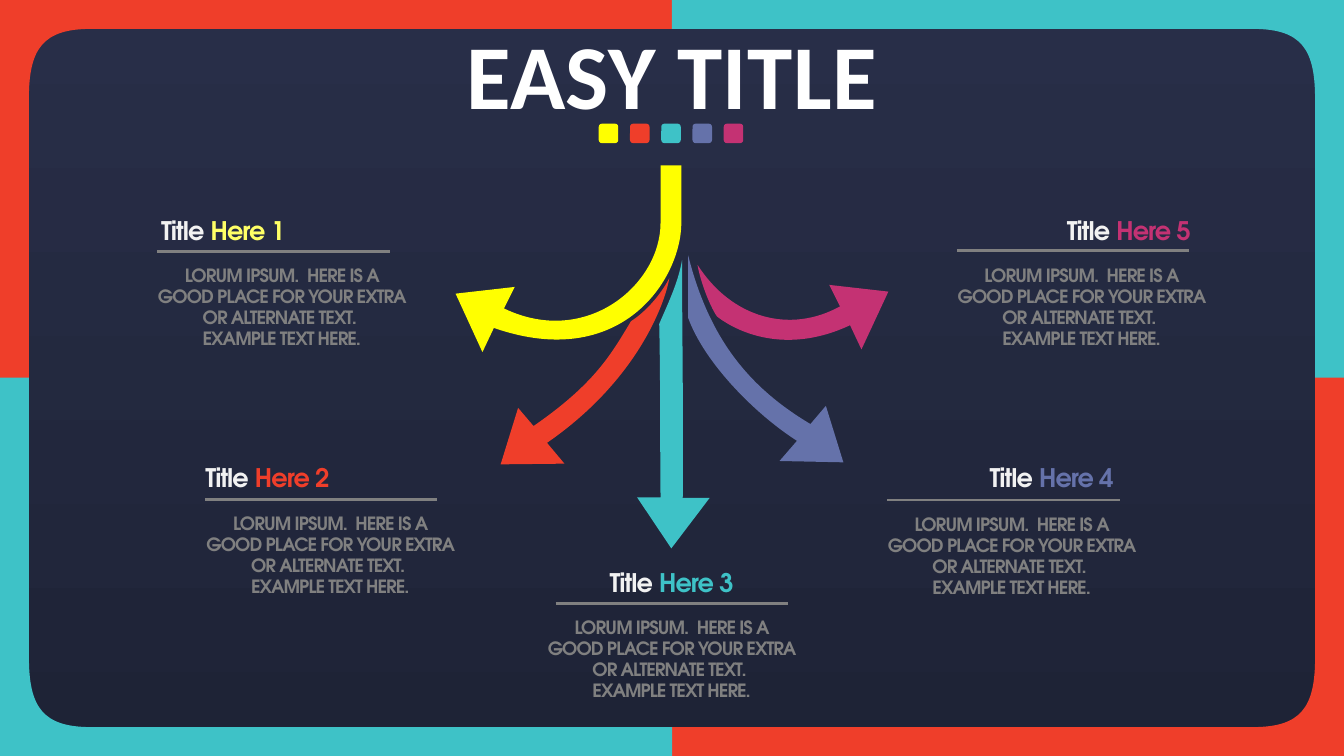
from lxml.etree import SubElement
from pptx import Presentation
from pptx.dml.color import RGBColor
from pptx.enum.shapes import MSO_CONNECTOR, MSO_SHAPE
from pptx.enum.text import MSO_ANCHOR, MSO_AUTO_SIZE, PP_ALIGN
from pptx.oxml.ns import qn
from pptx.util import Inches, Pt

COLUMNS, ROWS = 20, 11.25
CELL = Inches(1)
FONT = "TeX Gyre Adventor"
COLOURS = {
    "yellow": "FFFF00", "pale_yellow": "FFFF66", "red": "EF3E2A",
    "teal": "3EC2C7", "indigo": "6572AA", "magenta": "C43273",
    "white": "FFFFFF", "off_white": "F2F2F2", "grey": "808080",
    "navy_top": "282E48", "navy_bottom": "1E2336",
}
BODY = ["LORUM IPSUM.  HERE IS A GOOD PLACE FOR YOUR EXTRA OR ALTERNATE TEXT. ",
        "EXAMPLE TEXT HERE."]
SQUARES = ["yellow", "red", "teal", "indigo", "magenta"]
ARROWS = {
    "yellow": [(9.83, 2.46), (10.14, 2.46), (10.14, 3.31),
               (10.14, 4.16, 9.24, 5.54, 7.35, 4.88), (7.18, 5.24),
               (6.78, 4.37), (7.66, 4.27), (7.5, 4.59),
               (8.73, 5.18, 9.83, 4.23, 9.83, 3.32)],
    "red": [(9.96, 4.14), (9.91, 4.45, 9.53, 5.63, 8.14, 6.59), (8.4, 6.9),
            (7.45, 6.91), (7.71, 6.07), (7.94, 6.34),
            (8.85, 5.71, 9.09, 5.28, 9.39, 4.78),
            (9.61, 4.64, 9.83, 4.39, 9.96, 4.14)],
    "magenta": [(10.67, 4.71), (10.94, 4.92, 11.67, 5.3, 12.65, 4.84),
                (12.82, 5.2), (13.22, 4.34), (12.34, 4.24), (12.5, 4.56),
                (11.76, 4.97, 10.89, 4.74, 10.38, 3.94),
                (10.42, 4.18, 10.56, 4.55, 10.67, 4.71)],
    "indigo": [(10.24, 3.8), (10.24, 4.73),
               (10.48, 5.39, 11.22, 6.15, 11.86, 6.56), (11.6, 6.86),
               (12.55, 6.88), (12.29, 6.04), (12.06, 6.31),
               (11.17, 5.78, 10.56, 5.07, 10.24, 3.8)],
    "teal": [(10.15, 3.87), (10.15, 4.95, 10.17, 5.83, 10.16, 7.41),
             (10.56, 7.41), (9.99, 8.16), (9.48, 7.4), (9.83, 7.4),
             (9.82, 6.4, 9.83, 5.73, 9.81, 4.82),
             (9.92, 4.56, 10.09, 4.22, 10.15, 3.87)],
}
CORNER = [(0, 5.63), (0, 0), (10, 0), (10, 0.43), (1.36, 0.43),
          (0.64, 0.43, 0.43, 0.72, 0.43, 1.47), (0.43, 5.63)]
OPTIONS = [
    ((2.34, 3.74), (2.3, 3.27), (2.22, 3.9), PP_ALIGN.LEFT, "pale_yellow"),
    ((3.05, 7.43), (2.96, 6.94), (2.94, 7.59), PP_ALIGN.LEFT, "red"),
    ((8.27, 8.98), (8.41, 8.51), (8.02, 9.14), PP_ALIGN.CENTER, "teal"),
    ((13.2, 7.44), (13.5, 6.94), (13.08, 7.6), PP_ALIGN.RIGHT, "indigo"),
    ((14.24, 3.73), (14.65, 3.26), (14.12, 3.89), PP_ALIGN.RIGHT, "magenta"),
]


def colour(name):
    """Return the named palette colour."""
    return RGBColor.from_string(COLOURS[name])


def cells(*counts):
    """Turn counts of grid cells into lengths."""
    return [round(count * CELL) for count in counts]


def paint(shape, name):
    """Give a shape a flat fill without line or shadow."""
    shape.fill.solid()
    shape.fill.fore_color.rgb = colour(name)
    shape.line.fill.background()
    shape.shadow.inherit = False


def bend(segment, edge, shape):
    """Turn a straight segment into a Bézier one through the edge's controls."""
    segment.clear()
    segment.tag = qn("a:cubicBezTo")
    lengths = cells(*edge)
    for x, y in zip(lengths[::2], lengths[1::2]):
        SubElement(segment, qn("a:pt"), x=str(x - shape.left), y=str(y - shape.top))


def add_outline(slide, outline, name):
    """Draw a closed outline; edges of six numbers are Bézier curves."""
    anchors = [cells(*edge[-2:]) for edge in outline]
    builder = slide.shapes.build_freeform(*anchors[0])
    builder.add_line_segments(anchors[1:], close=True)
    shape = builder.convert_to_shape()
    segments = list(shape._element.iter(qn("a:lnTo")))
    for segment, edge in zip(segments, outline[1:]):
        if len(edge) == 6:
            bend(segment, edge, shape)
    paint(shape, name)
    return shape


def add_frame(slide):
    """Draw the upper corners, then turn each one to the opposite corner."""
    mirrored = [tuple(COLUMNS - value if index % 2 == 0 else value
                      for index, value in enumerate(edge)) for edge in CORNER]
    corners = ((CORNER, "red", COLUMNS / 2), (mirrored, "teal", 0))
    for outline, name, _ in corners:
        add_outline(slide, outline, name)
    for outline, name, left in corners:
        shape = add_outline(slide, outline, name)
        shape.left, shape.top = cells(left, ROWS - 5.63)
        shape.rotation = 180


def format_run(run, font, size, name, spacing):
    """Format a bold run with letter spacing in hundredths of a point."""
    run.font.name = font
    run.font.size = Pt(size)
    run.font.bold = True
    run.font.color.rgb = colour(name)
    run.font._element.set("spc", str(spacing))


def format_paragraph(paragraph, alignment, line_spacing):
    """Set alignment and exact line spacing."""
    paragraph.alignment = alignment
    paragraph.line_spacing = Pt(line_spacing)
    paragraph.space_before = Pt(0)


def add_title(slide):
    """Fill and place the slide title."""
    title = slide.shapes.title
    title.left, title.top, title.width, title.height = cells(4.24, 0.68, 11.52, 1.29)
    frame = title.text_frame
    frame.text = "EASY TITLE"
    frame.margin_left = frame.margin_right = frame.margin_top = frame.margin_bottom = 0
    frame.vertical_anchor = MSO_ANCHOR.TOP
    frame.auto_size = MSO_AUTO_SIZE.SHAPE_TO_FIT_TEXT
    format_paragraph(frame.paragraphs[0], PP_ALIGN.CENTER, 88)
    format_run(frame.paragraphs[0].runs[0], "Calibri", 97.8, "white", 70)


def add_text_frame(slide, left, top, width, height):
    """Add a wrapping text box and return its text frame."""
    frame = slide.shapes.add_textbox(*cells(left, top, width, height)).text_frame
    frame.word_wrap = True
    frame.auto_size = MSO_AUTO_SIZE.SHAPE_TO_FIT_TEXT
    return frame


def add_rule(slide, left, top):
    """Draw the grey line below a heading."""
    rule = slide.shapes.add_connector(
        MSO_CONNECTOR.STRAIGHT, *cells(left, top, left + 3.46, top))
    rule.line.color.rgb = colour("grey")
    rule.line.width = Pt(3)
    SubElement(rule._element.spPr, qn("a:effectLst"))


def add_option(slide, number, rule_at, heading_at, body_at, alignment, name):
    """Add the body text, a heading and its rule."""
    body = add_text_frame(slide, *body_at, 3.95, 1.39)
    body.text = "\n".join(BODY)
    for paragraph in body.paragraphs:
        format_paragraph(paragraph, PP_ALIGN.CENTER, 22.5)
        format_run(paragraph.runs[0], FONT, 19.6, "grey", -100)
    heading = add_text_frame(slide, *heading_at, 3.17, 0.44).paragraphs[0]
    format_paragraph(heading, alignment, 24.5)
    for text, run_colour in (("Title ", "off_white"), (f"Here {number}", name)):
        run = heading.add_run()
        run.text = text
        format_run(run, FONT, 27.4, run_colour, -100)
    add_rule(slide, *rule_at)


def main():
    """Build and save the slide."""
    presentation = Presentation()
    presentation.slide_width, presentation.slide_height = cells(COLUMNS, ROWS)
    slide = presentation.slides.add_slide(presentation.slide_layouts[5])
    background = slide.background.fill
    background.gradient()
    background.gradient_angle = 270
    for stop, name in zip(background.gradient_stops, ("navy_top", "navy_bottom")):
        stop.color.rgb = colour(name)
    for index, name in enumerate(SQUARES):
        square = slide.shapes.add_shape(
            MSO_SHAPE.ROUNDED_RECTANGLE, *cells(8.91 + 0.465 * index, 1.84, 0.29, 0.29))
        paint(square, name)
    for name, outline in ARROWS.items():
        add_outline(slide, outline, name)
    for number, option in enumerate(OPTIONS, start=1):
        add_option(slide, number, *option)
    add_title(slide)
    add_frame(slide)
    presentation.save("out.pptx")


if __name__ == "__main__":
    main()
